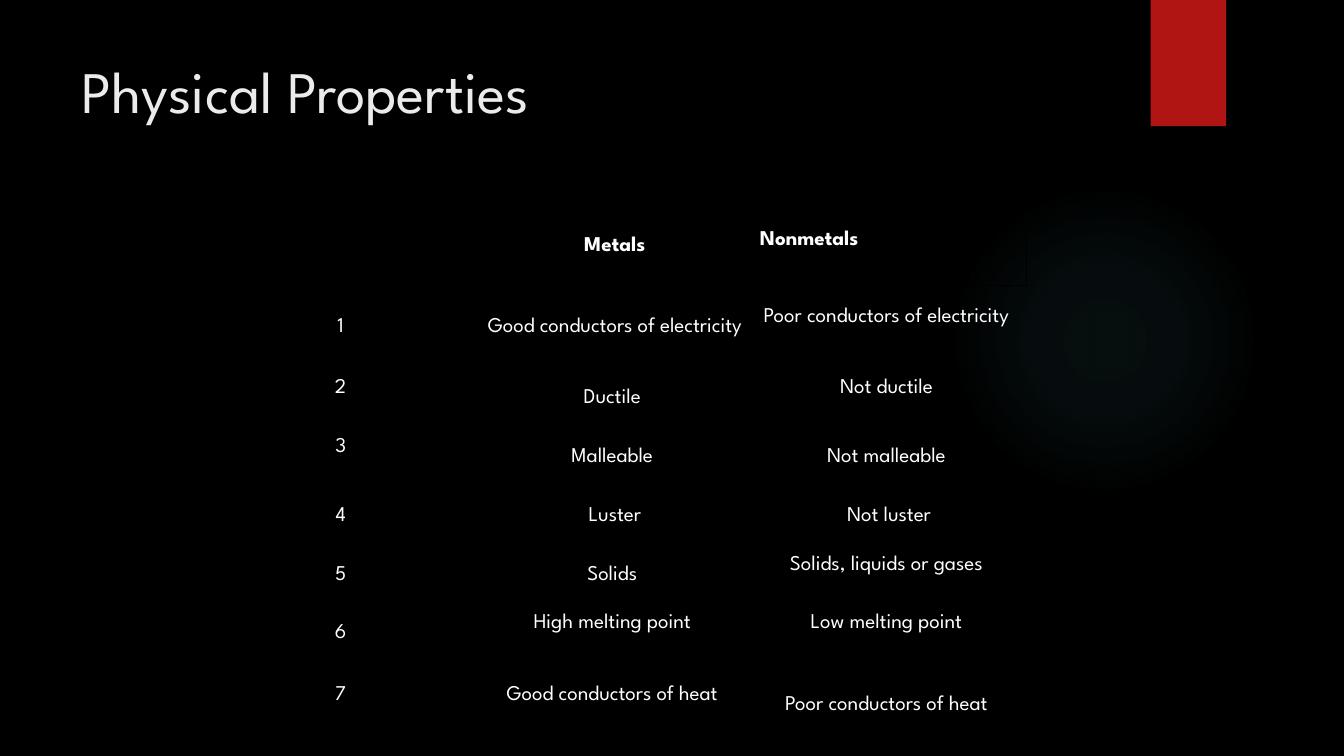
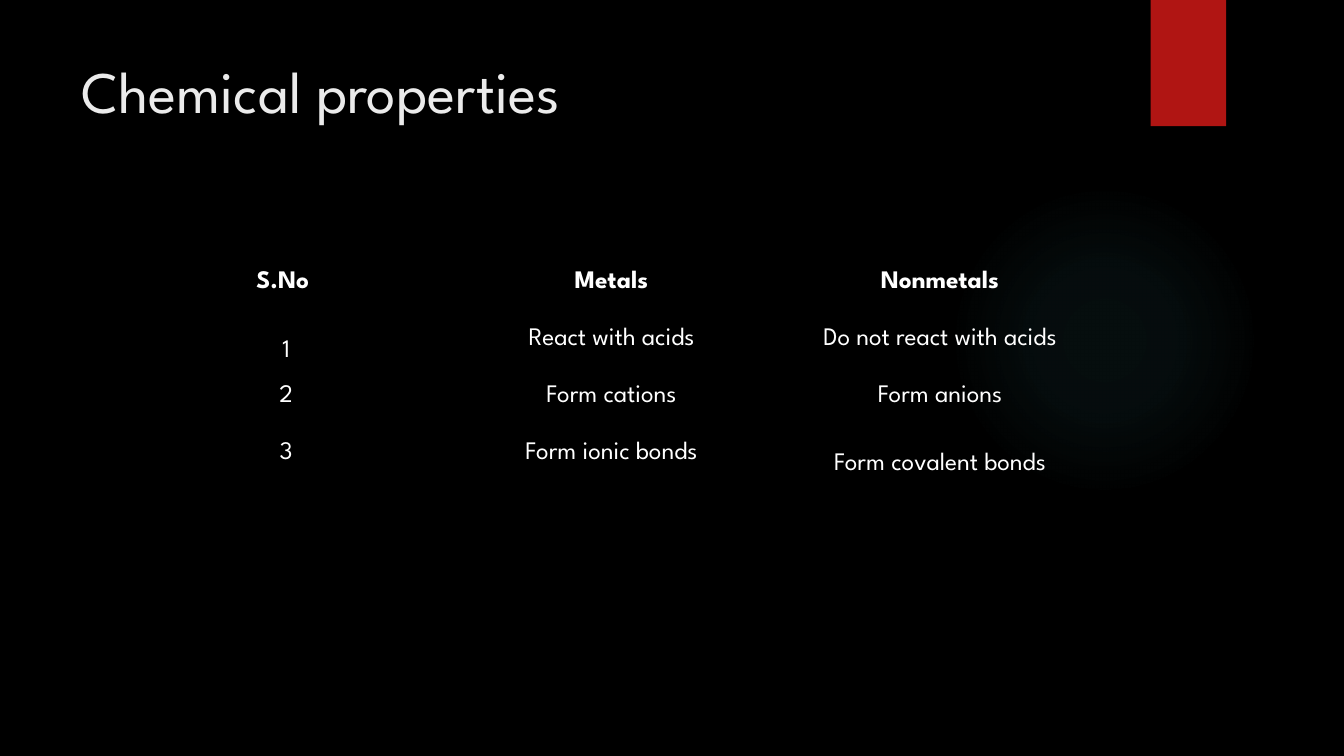
from lxml import etree
from pptx import Presentation
from pptx.dml.color import RGBColor
from pptx.enum.shapes import MSO_SHAPE as Preset
from pptx.enum.text import MSO_ANCHOR as Anchor, PP_ALIGN as Align
from pptx.oxml import parse_xml
from pptx.oxml.ns import nsdecls, qn
from pptx.util import Cm, Pt

FONT = "League Spartan"
COLORS = {"background": "000000", "title": "EBEBEB", "text": "FFFFFF",
          "ribbon": "B01513", "glow": "50B9C1"}
GLOW_STOPS = [(0, 7), (36, 6), (69, 0)]
NO_TABLE_STYLE = "{2D5ABB26-0587-4C30-8999-92F81FD0307C}"
CENTRED, RAISED, TOP_LEFT = "-^<"

SLIDES = [
    {
        "title": "Physical Properties",
        "left": 5.13, "top": 5.72, "column": 6.91, "size": 15,
        "inset": (0.2, 0.1), "raise": 0.5,
        "heights": [1.48, 2.11, 1.48, 1.48, 1.48, 1.48, 1.48, 2.11],
        "rows": [
            ("-^<", "", "Metals", "Nonmetals"),
            ("--^", "1", "Good conductors of electricity ", "Poor conductors of electricity "),
            ("^-^", "2", "Ductile ", "Not ductile "),
            ("^--", "3", "Malleable ", "Not malleable "),
            ("---", "4", "Luster", "Not luster"),
            ("--^", "5", "Solids ", "Solids, liquids or gases "),
            ("-^^", "6", "High melting point ", "Low melting point "),
            ("^^-", "7", "Good conductors of heat ", "Poor conductors of heat "),
        ],
    },
    {
        "title": "Chemical properties",
        "left": 3.07, "top": 6.7, "column": 8.28, "size": 18,
        "inset": (0.25, 0.04), "raise": 0.58,
        "heights": [1.43] * 4,
        "rows": [
            ("^^^", "S.No ", "Metals ", "Nonmetals "),
            ("-^^", "1", "React with acids ", "Do not react with acids "),
            ("^^^", "2", "Form cations ", "Form anions "),
            ("^^-", "3", "Form ionic bonds ", "Form covalent bonds "),
        ],
    },
]


def color(name):
    return RGBColor.from_string(COLORS[name])


def style_text(paragraph, size, color_name, bold=False):
    for run in paragraph.runs:
        run.font.name = FONT
        run.font.size = Pt(size)
        run.font.bold = bold
        run.font.color.rgb = color(color_name)


def add_plain_shape(slide, preset, left, top, width, height):
    shape = slide.shapes.add_shape(preset, Cm(left), Cm(top), Cm(width), Cm(height))
    shape.shadow.inherit = False
    shape.line.fill.background()
    return shape


def add_decor(slide):
    glow = add_plain_shape(slide, Preset.OVAL, 23.92, 4.66, 7.83, 7.83)
    stops = "".join(
        f'<a:gs pos="{position * 1000}"><a:srgbClr val="{COLORS["glow"]}">'
        f'<a:alpha val="{alpha * 1000}"/></a:srgbClr></a:gs>'
        for position, alpha in GLOW_STOPS)
    gradient = parse_xml(
        f'<a:gradFill {nsdecls("a")} rotWithShape="1"><a:gsLst>{stops}</a:gsLst>'
        '<a:path path="circle"><a:fillToRect l="50000" t="50000" r="50000" b="50000"/>'
        '</a:path></a:gradFill>')
    glow.element.spPr.find(qn("a:prstGeom")).addnext(gradient)

    ribbon = add_plain_shape(slide, Preset.RECTANGLE, 29, 0, 1.9, 3.18)
    ribbon.fill.solid()
    ribbon.fill.fore_color.rgb = color("ribbon")


def add_title(slide, title):
    box = slide.shapes.add_textbox(Cm(1.8), Cm(1.26), Cm(26.14), Cm(3.89))
    box.text_frame.word_wrap = True
    box.text_frame.text = title
    style_text(box.text_frame.paragraphs[0], 42, "title")


def add_corner_border(cell):
    properties = cell._tc.get_or_add_tcPr()
    for index, side in enumerate(("lnR", "lnB")):
        border = etree.Element(qn(f"a:{side}"), w="12700")
        fill = etree.SubElement(border, qn("a:solidFill"))
        etree.SubElement(fill, qn("a:srgbClr"), val=COLORS["background"])
        properties.insert(index, border)


def fill_cell(cell, text, mark, content, bold):
    side, edge = content["inset"]
    cell.fill.background()
    cell.margin_left = cell.margin_right = Cm(side)
    cell.margin_top = Cm(edge)
    cell.margin_bottom = Cm(edge + (content["raise"] if mark == RAISED else 0))
    cell.vertical_anchor = Anchor.TOP if mark == TOP_LEFT else Anchor.MIDDLE
    cell.text_frame.text = text
    paragraph = cell.text_frame.paragraphs[0]
    paragraph.alignment = Align.LEFT if mark == TOP_LEFT else Align.CENTER
    style_text(paragraph, content["size"], "text", bold)
    if mark == TOP_LEFT:
        add_corner_border(cell)


def add_properties(slide, content):
    rows, heights = content["rows"], content["heights"]
    columns = len(rows[0]) - 1
    frame = slide.shapes.add_table(
        len(rows), columns, Cm(content["left"]), Cm(content["top"]),
        Cm(content["column"] * columns), Cm(sum(heights)))
    table = frame.table
    table.horz_banding = False
    table._tbl.tblPr.find(qn("a:tableStyleId")).text = NO_TABLE_STYLE
    for column in table.columns:
        column.width = Cm(content["column"])
    for row_index, (marks, *texts) in enumerate(rows):
        table.rows[row_index].height = Cm(heights[row_index])
        for column_index, (mark, text) in enumerate(zip(marks, texts)):
            fill_cell(table.cell(row_index, column_index), text, mark, content,
                      bold=row_index == 0)


def main():
    deck = Presentation()
    deck.slide_width, deck.slide_height = Cm(33.87), Cm(19.05)
    background = deck.slide_master.background.fill
    background.solid()
    background.fore_color.rgb = color("background")
    for content in SLIDES:
        slide = deck.slides.add_slide(deck.slide_layouts[6])
        add_decor(slide)
        add_title(slide, content["title"])
        add_properties(slide, content)
    deck.save("out.pptx")


if __name__ == "__main__":
    main()
